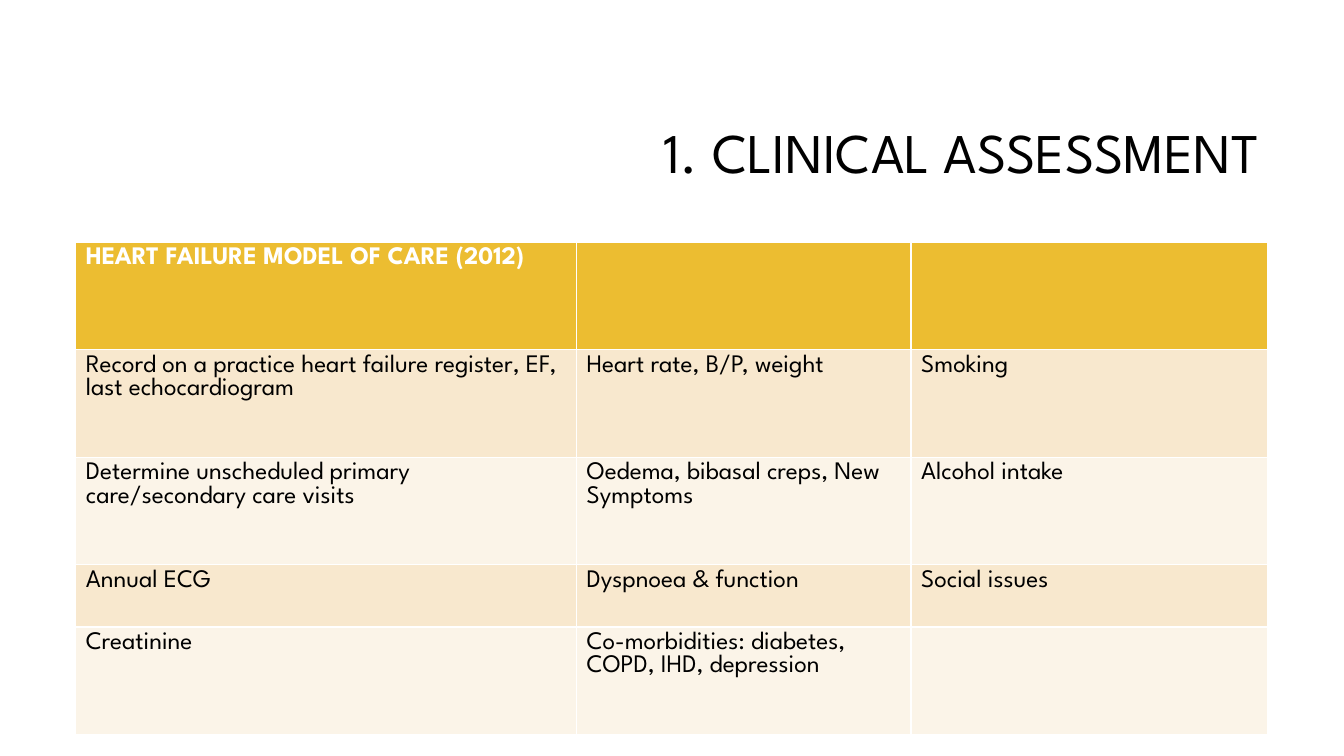
from pptx import Presentation
from pptx.dml.color import RGBColor
from pptx.enum.text import MSO_ANCHOR, PP_ALIGN
from pptx.util import Cm, Pt

FONT = "League Spartan"
BLACK = RGBColor(0x00, 0x00, 0x00)
WHITE = RGBColor(0xFF, 0xFF, 0xFF)
GOLD = RGBColor(0xEC, 0xBD, 0x31)
SAND = RGBColor(0xF8, 0xE8, 0xCE)
CREAM = RGBColor(0xFB, 0xF4, 0xE8)

COLUMN_WIDTHS = [12.62, 8.43, 8.99]
ROW_HEIGHTS = [2.71, 2.71, 2.71, 1.57, 2.71]
ASSESSMENT_ROWS = [
    ["HEART FAILURE MODEL OF CARE (2012)", "", ""],
    ["Record on a practice heart failure register, EF, last echocardiogram",
     "Heart rate, B/P, weight", "Smoking"],
    ["Determine unscheduled primary care/secondary care visits",
     "Oedema, bibasal creps, New Symptoms", "Alcohol intake"],
    ["Annual ECG", "Dyspnoea & function", "Social issues"],
    ["Creatinine", "Co-morbidities: diabetes, COPD, IHD, depression", ""],
]

deck = Presentation()
deck.slide_width, deck.slide_height = Cm(33.87), Cm(19.05)
page = deck.slides.add_slide(deck.slide_layouts[5])

title = page.shapes.title
title.left, title.top, title.width, title.height = Cm(8.05), Cm(2.13), Cm(23.93), Cm(3.58)
title.text_frame.text = "1. CLINICAL ASSESSMENT"
title.text_frame.vertical_anchor = MSO_ANCHOR.MIDDLE
heading = title.text_frame.paragraphs[0]
heading.alignment = PP_ALIGN.RIGHT
heading.line_spacing = 0.9
heading.font.name = FONT
heading.font.size = Pt(40)
heading.font.color.rgb = BLACK

# The default table style draws the white rules and the thicker line below the header.
table = page.shapes.add_table(
    len(ROW_HEIGHTS), len(COLUMN_WIDTHS), Cm(1.91), Cm(6.1),
    Cm(sum(COLUMN_WIDTHS)), Cm(sum(ROW_HEIGHTS))).table
for column, width in zip(table.columns, COLUMN_WIDTHS):
    column.width = Cm(width)

for index, (row, height, texts) in enumerate(zip(table.rows, ROW_HEIGHTS, ASSESSMENT_ROWS)):
    row.height = Cm(height)
    is_header = index == 0
    band = GOLD if is_header else (CREAM, SAND)[index % 2]
    for cell, text in zip(row.cells, texts):
        cell.fill.solid()
        cell.fill.fore_color.rgb = band
        cell.text = text
        para = cell.text_frame.paragraphs[0]
        para.font.name = FONT
        para.font.size = Pt(18)
        para.font.bold = is_header
        para.font.color.rgb = WHITE if is_header else BLACK

deck.save("out.pptx")
